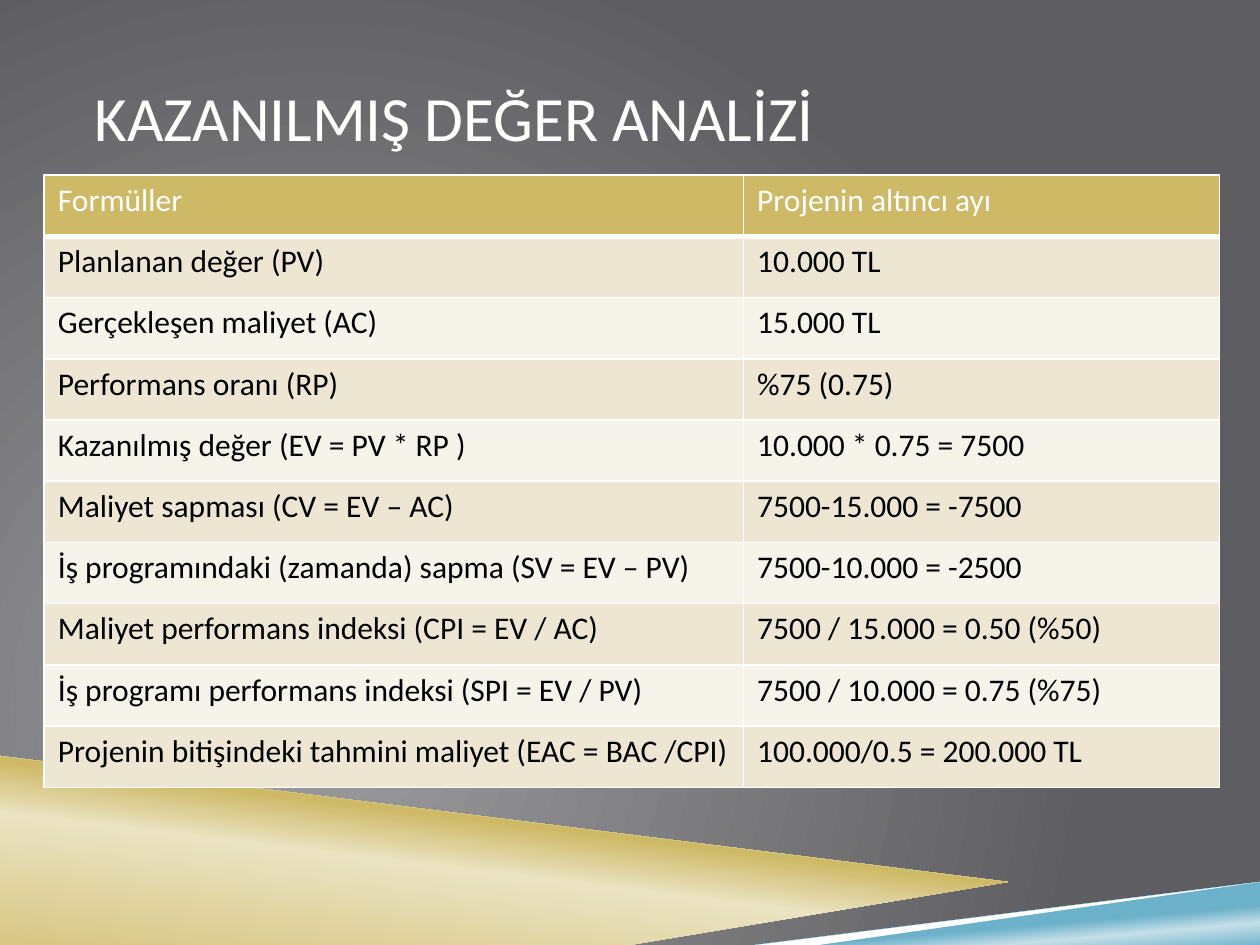
from lxml.etree import SubElement as Sub
from pptx import Presentation
from pptx.dml.color import RGBColor as RGB
from pptx.enum.text import MSO_ANCHOR as Anchor
from pptx.oxml.ns import qn
from pptx.util import Inches, Pt

FONT = "Calibri"
WHITE = RGB(0xFF, 0xFF, 0xFF)
BLACK = RGB(0, 0, 0)
GOLD = RGB(0xCE, 0xB9, 0x66)
CREAM = RGB(0xEB, 0xE3, 0xC2)
BLUE = RGB(0x6B, 0xB1, 0xC9)
ICE = RGB(0xC4, 0xE0, 0xE9)
ASH = RGB(0x9C, 0x9B, 0x9E)
SLATE = RGB(0x5E, 0x5D, 0x61)
BANDS = RGB(0xED, 0xE6, 0xD3), RGB(0xF6, 0xF3, 0xEA)

TITLE = "KAZANILMIŞ DEĞER ANALİZİ"
ROWS = [
    ("Formüller", "Projenin altıncı ayı"),
    ("Planlanan değer (PV)", "10.000 TL"),
    ("Gerçekleşen maliyet (AC)", "15.000 TL"),
    ("Performans oranı (RP)", "%75 (0.75)"),
    ("Kazanılmış değer (EV = PV * RP )", "10.000 * 0.75 = 7500"),
    ("Maliyet sapması (CV = EV – AC)", "7500-15.000 = -7500"),
    ("İş programındaki (zamanda) sapma (SV = EV – PV)",
     "7500-10.000 = -2500"),
    ("Maliyet performans indeksi (CPI = EV / AC)",
     "7500 / 15.000 = 0.50 (%50)"),
    ("İş programı performans indeksi (SPI = EV / PV)",
     "7500 / 10.000 = 0.75 (%75)"),
    ("Projenin bitişindeki tahmini maliyet (EAC = BAC /CPI)",
     "100.000/0.5 = 200.000 TL"),
]


def add_color(parent, color):
    Sub(parent, qn("a:srgbClr"), val=str(color))


def set_grad(host, stops, angle=None):
    """Refill the gradient in host; without an angle it is circular."""
    grad = host.find(".//" + qn("a:gradFill"))
    for child in list(grad):
        grad.remove(child)
    group = Sub(grad, qn("a:gsLst"))
    for pos, color in stops:
        add_color(Sub(group, qn("a:gs"), pos=str(pos * 1000)), color)
    if angle is None:
        route = Sub(grad, qn("a:path"), path="circle")
        Sub(route, qn("a:fillToRect"),
            l="50000", t="100000", r="100000", b="50000")
    else:
        Sub(grad, qn("a:lin"), ang=str(angle * 60000), scaled="0")


def add_back(slide):
    slide.background.fill.gradient()
    set_grad(slide.element, [(0, ASH), (100, SLATE)])


def add_facet(slide, left, top, points):
    """Draw a closed outline from points relative to left and top."""
    spots = [(left + x, top + y) for x, y in points]
    build = slide.shapes.build_freeform(*spots[0], scale=Inches(1))
    build.add_line_segments(spots[1:], close=True)
    shape = build.convert_to_shape()
    shape.shadow.inherit = False
    shape.line.fill.background()
    return shape


def add_wedge(slide, left, top, points, stops, angle):
    shape = add_facet(slide, left, top, points)
    shape.fill.gradient()
    set_grad(shape.element.spPr, stops, angle)


def add_stripe(slide, left, top, points):
    fill = add_facet(slide, left, top, points).fill
    fill.solid()
    fill.fore_color.rgb = WHITE


def add_decor(slide):
    add_wedge(slide, 0, 5.97, [(0, 0), (7.92, 0.95), (2, 1.53), (0, 1.53)],
              [(0, GOLD), (52, CREAM), (66, GOLD)], 277)
    add_wedge(slide, 1.98, 6.72, [(0, 0.78), (8.02, 0), (8.02, 0.78)],
              [(28, BLUE), (40, ICE), (48, BLUE)], 265)
    add_stripe(slide, 0, 5.92, [(0, 0), (0, 0.08), (7.9, 1.01), (8.32, 0.98)])
    add_stripe(slide, 1.84, 6.69,
               [(8.16, 0), (0, 0.81), (0.82, 0.81), (8.16, 0.08)])


def set_font(para, size, color):
    for run in para.runs:
        font = run.font
        font.name, font.size, font.bold = FONT, Pt(size), False
        font.color.rgb = color


def add_title(slide, left, top, width, height):
    box = slide.shapes.add_textbox(
        Inches(left), Inches(top), Inches(width), Inches(height))
    frame = box.text_frame
    frame.word_wrap = True
    frame.vertical_anchor = Anchor.MIDDLE
    frame.margin_left = frame.margin_right = 0
    frame.text = TITLE
    set_font(frame.paragraphs[0], 36, WHITE)


def set_cell(cell, text, fill, color, base):
    """Fill one cell; base is the width of its bottom border in points."""
    props = cell._tc.get_or_add_tcPr()
    for side, width in zip("LRTB", (1, 1, 1, base)):
        line = Sub(props, qn("a:ln" + side), w=str(Pt(width)))
        add_color(Sub(line, qn("a:solidFill")), WHITE)
    cell.fill.solid()
    cell.fill.fore_color.rgb = fill
    cell.margin_left = cell.margin_right = Inches(0.11)
    cell.text_frame.text = text
    set_font(cell.text_frame.paragraphs[0], 18, color)


def add_grid(slide, left, top, widths, height):
    table = slide.shapes.add_table(
        len(ROWS), len(widths), Inches(left), Inches(top),
        Inches(sum(widths)), Inches(height)).table
    for col, width in zip(table.columns, widths):
        col.width = Inches(width)
    for i, texts in enumerate(ROWS):
        table.rows[i].height = Inches(height / len(ROWS))
        if i == 0:
            look = GOLD, WHITE, 3
        else:
            look = BANDS[(i - 1) % 2], BLACK, 1
        for j, text in enumerate(texts):
            set_cell(table.cell(i, j), text, *look)


def main():
    deck = Presentation()
    deck.slide_width, deck.slide_height = Inches(10), Inches(7.5)
    slide = deck.slides.add_slide(deck.slide_layouts[6])
    add_back(slide)
    add_decor(slide)
    add_title(slide, 0.75, 0.3, 8.5, 1.25)
    add_grid(slide, 0.35, 1.39, (5.55, 3.78), 4.86)
    deck.save("out.pptx")


if __name__ == "__main__":
    main()
